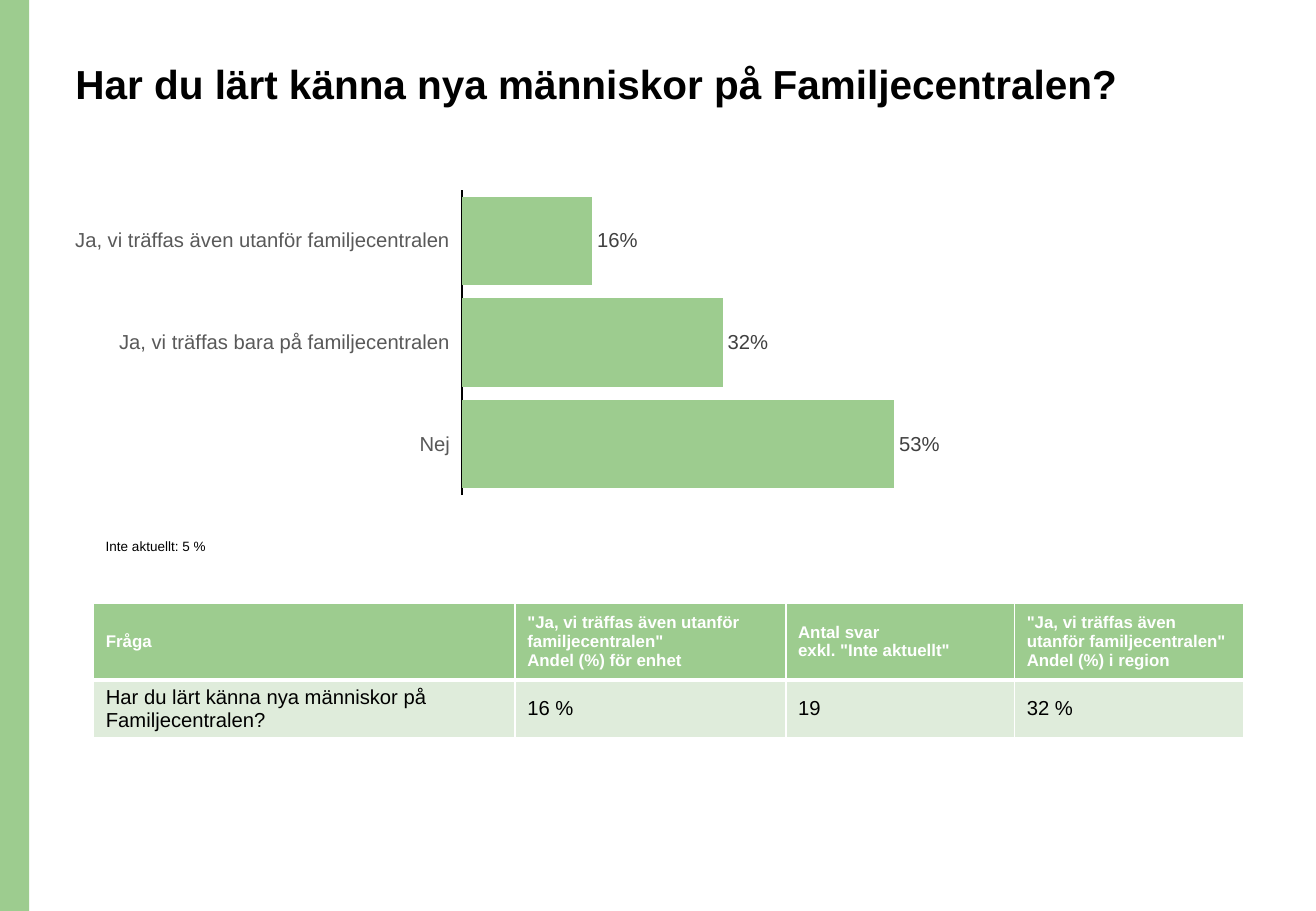
from dataclasses import dataclass

from lxml.etree import SubElement
from pptx import Presentation
from pptx.chart.data import CategoryChartData
from pptx.dml.color import RGBColor
from pptx.enum.chart import XL_CHART_TYPE, XL_LABEL_POSITION, XL_TICK_LABEL_POSITION, XL_TICK_MARK
from pptx.enum.shapes import MSO_SHAPE
from pptx.enum.text import MSO_ANCHOR, MSO_AUTO_SIZE, PP_ALIGN
from pptx.oxml import parse_xml
from pptx.oxml.ns import nsdecls, qn
from pptx.util import Cm, Pt


@dataclass(frozen=True)
class Theme:
    font: str = "Arial"
    green: str = "9DCC8F"
    pale_green: str = "DFECDB"
    black: str = "000000"
    white: str = "FFFFFF"
    axis_grey: str = "595959"
    label_grey: str = "404040"
    title_size: int = 24
    body_size: int = 12
    header_size: int = 10
    note_size: int = 8


THEME = Theme()
QUESTION = "Har du lärt känna nya människor på Familjecentralen?"
YES_OUTSIDE = "Ja, vi träffas även utanför familjecentralen"
ANSWERS = {YES_OUTSIDE: 0.16, "Ja, vi träffas bara på familjecentralen": 0.32, "Nej": 0.53}
HEADERS = [
    "Fråga",
    f'"{YES_OUTSIDE}"\nAndel (%) för enhet',
    'Antal svar\nexkl. "Inte aktuellt"',
    f'"{YES_OUTSIDE}"\nAndel (%) i region',
]
RESULTS = [QUESTION, "16 %", "19", "32 %"]
COLUMN_WIDTHS = [8.81, 5.66, 4.78, 4.78]
ROW_HEIGHTS = [1.6, 0.6]


def style_font(font, size, color, bold=False):
    font.name = THEME.font
    font.size = Pt(size)
    font.bold = bold
    font.color.rgb = RGBColor.from_string(color)


def fill_solid(fill, color):
    fill.solid()
    fill.fore_color.rgb = RGBColor.from_string(color)


def add_stripe(slide, box):
    stripe = slide.shapes.add_shape(MSO_SHAPE.RECTANGLE, *map(Cm, box))
    stripe.shadow.inherit = False
    fill_solid(stripe.fill, THEME.green)
    stripe.line.fill.background()


def place_title(slide, box):
    title = slide.shapes.title
    title.left, title.top, title.width, title.height = map(Cm, box)
    frame = title.text_frame
    frame.text = QUESTION
    frame.word_wrap = True
    frame.auto_size = MSO_AUTO_SIZE.NONE
    frame.vertical_anchor = MSO_ANCHOR.TOP
    heading = frame.paragraphs[0]
    heading.alignment = PP_ALIGN.LEFT
    heading.line_spacing = 0.9
    style_font(heading.font, THEME.title_size, THEME.black, bold=True)


def add_answer_chart(slide, box):
    answers = CategoryChartData(number_format="0%")
    answers.categories = list(ANSWERS)
    answers.add_series("Series 1", list(ANSWERS.values()))
    chart = slide.shapes.add_chart(XL_CHART_TYPE.BAR_CLUSTERED, *map(Cm, box), answers).chart
    chart.has_legend = False
    chart.has_title = False
    style_font(chart.font, THEME.header_size, THEME.black)

    answer_axis = chart.category_axis
    answer_axis.reverse_order = True
    answer_axis.major_tick_mark = XL_TICK_MARK.NONE
    answer_axis.tick_label_position = XL_TICK_LABEL_POSITION.LOW
    answer_axis.format.line.width = Pt(0.75)
    answer_axis.format.line.color.rgb = RGBColor.from_string(THEME.black)
    style_font(answer_axis.tick_labels.font, THEME.body_size, THEME.axis_grey)

    share_axis = chart.value_axis
    share_axis.visible = False
    share_axis.has_major_gridlines = False
    share_axis.minimum_scale = 0
    share_axis.maximum_scale = 0.6

    plot = chart.plots[0]
    plot.gap_width = 15
    plot.vary_by_categories = False
    fill_solid(plot.series[0].format.fill, THEME.green)
    plot.has_data_labels = True
    shares = plot.data_labels
    shares.show_value = True
    shares.number_format = "0%"
    shares.number_format_is_linked = False
    shares.position = XL_LABEL_POSITION.OUTSIDE_END
    style_font(shares.font, THEME.body_size, THEME.label_grey)
    set_plot_area(plot, x=0.44, y=0.02, w=0.54, h=0.96)


def set_plot_area(plot, **fractions):
    plot_area = plot._element.getparent()
    for auto_layout in plot_area.findall(qn("c:layout")):
        plot_area.remove(auto_layout)
    layout = parse_xml(
        f'<c:layout {nsdecls("c")}><c:manualLayout><c:layoutTarget val="inner"/>'
        '<c:xMode val="edge"/><c:yMode val="edge"/></c:manualLayout></c:layout>'
    )
    for side, fraction in fractions.items():
        SubElement(layout[0], qn(f"c:{side}"), val=str(fraction))
    plot_area.insert(0, layout)


def add_note(slide, box):
    frame = slide.shapes.add_textbox(*map(Cm, box)).text_frame
    frame.word_wrap = True
    frame.auto_size = MSO_AUTO_SIZE.SHAPE_TO_FIT_TEXT
    frame.text = "Inte aktuellt: 5 %"
    note = frame.paragraphs[0]
    note.line_spacing = 1.5
    style_font(note.font, THEME.note_size, THEME.black)


def set_borders(cell, **widths):
    properties = cell._tc.get_or_add_tcPr()
    for side in "LRTB":
        border = SubElement(properties, qn(f"a:ln{side}"), w=str(Pt(widths.get(side, 1))))
        color = SubElement(border, qn("a:solidFill"))
        SubElement(color, qn("a:srgbClr"), val=THEME.white)


def fill_row(cells, texts, background, size, color, bold, borders):
    for cell, text in zip(cells, texts):
        set_borders(cell, **borders)
        fill_solid(cell.fill, background)
        cell.vertical_anchor = MSO_ANCHOR.MIDDLE
        cell.text = text
        for paragraph in cell.text_frame.paragraphs:
            style_font(paragraph.font, size, color, bold)


def add_result_table(slide, left, top):
    size = sum(COLUMN_WIDTHS), sum(ROW_HEIGHTS)
    table = slide.shapes.add_table(
        len(ROW_HEIGHTS), len(COLUMN_WIDTHS), *map(Cm, (left, top, *size))
    ).table
    table.horz_banding = False
    for column, width in zip(table.columns, COLUMN_WIDTHS):
        column.width = Cm(width)
    for row, height in zip(table.rows, ROW_HEIGHTS):
        row.height = Cm(height)
    header, result = table.rows
    fill_row(header.cells, HEADERS, THEME.green, THEME.header_size, THEME.white, True, {"B": 3})
    fill_row(result.cells, RESULTS, THEME.pale_green, THEME.body_size, THEME.black, False, {"T": 3})


def main():
    presentation = Presentation()
    presentation.slide_width = Cm(27.51)
    presentation.slide_height = Cm(19.05)
    slide = presentation.slides.add_slide(presentation.slide_layouts[5])
    add_stripe(slide, (0, 0, 0.61, 19.05))
    place_title(slide, (1.32, 1.22, 23.72, 2.59))
    add_result_table(slide, 1.96, 12.62)
    add_note(slide, (1.96, 10.95, 5.33, 0.71))
    add_answer_chart(slide, (1.32, 3.84, 18.95, 6.65))
    presentation.save("out.pptx")


if __name__ == "__main__":
    main()
